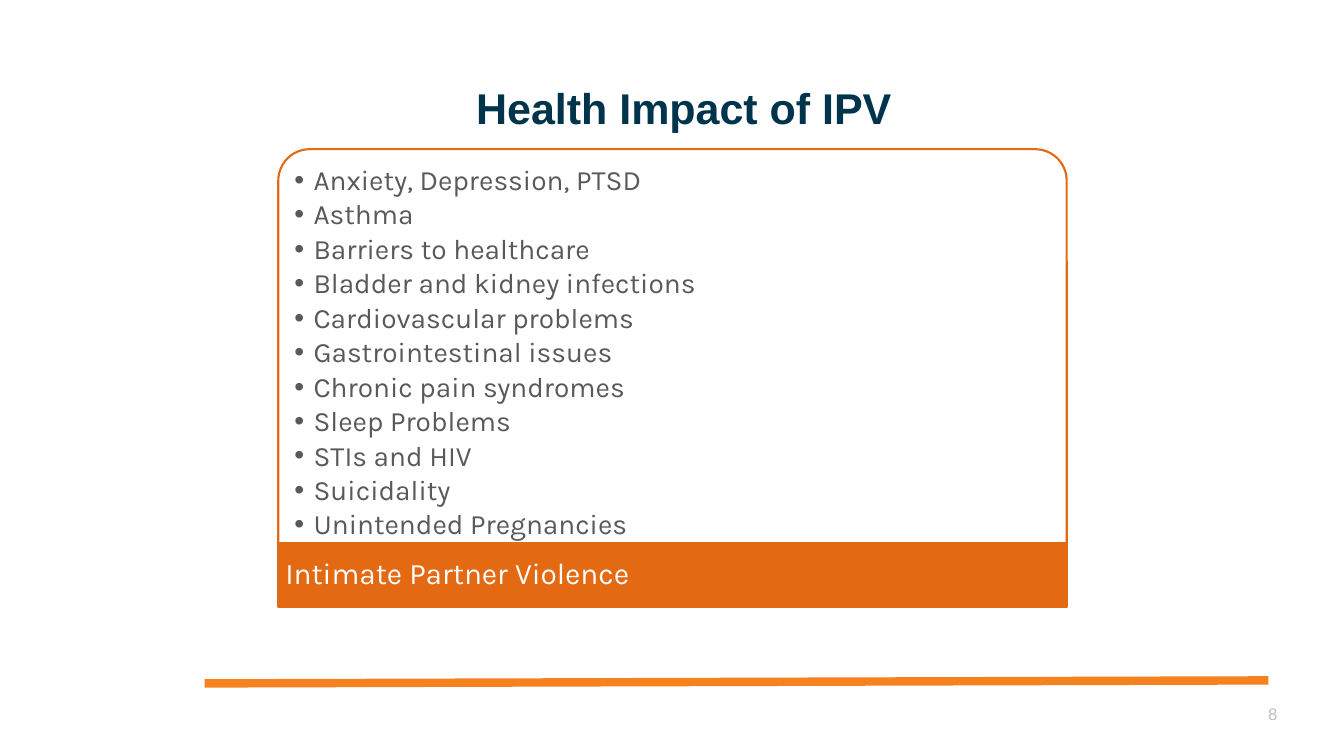
import pptx
import pptx.dml.color
import pptx.enum.shapes
import pptx.enum.text
import pptx.oxml.ns
import pptx.util
from lxml import etree
from pptx.util import Inches

TITLE = "Health Impact of IPV"
IMPACTS = [
    "Anxiety, Depression, PTSD",
    "Asthma",
    "Barriers to healthcare",
    "Bladder and kidney infections",
    "Cardiovascular problems",
    "Gastrointestinal issues",
    "Chronic pain syndromes",
    "Sleep Problems",
    "STIs and HIV",
    "Suicidality",
    "Unintended Pregnancies",
]
CAUSE = "Intimate Partner Violence"
PAGE_NUMBER = "8"

NAVY, ORANGE, RULE_ORANGE = "00334C", "E36912", "F5811F"
WHITE, TEXT_GREY, PALE_GREY = "FFFFFF", "58595B", "BFBFBF"
PANEL_LEFT, PANEL_TOP, PANEL_WIDTH, PANEL_HEIGHT = 2.76, 1.48, 7.82, 3.91
CAUSE_HEIGHT = 0.63

ALIGN = pptx.enum.text.PP_ALIGN
ANCHOR = pptx.enum.text.MSO_ANCHOR
SHAPE = pptx.enum.shapes.MSO_SHAPE


def rgb(value):
    return pptx.dml.color.RGBColor.from_string(value)


def add_element(parent, tag, **attributes):
    element = etree.SubElement(parent, pptx.oxml.ns.qn(tag))
    for name, value in attributes.items():
        element.set(name, value)
    return element


def set_frame(shape, insets=(0, 0, 0, 0), anchor=ANCHOR.TOP):
    """Set wrapping, anchor and the left, top, right and bottom insets."""
    frame = shape.text_frame
    frame.word_wrap = True
    frame.vertical_anchor = anchor
    (frame.margin_left, frame.margin_top,
     frame.margin_right, frame.margin_bottom) = map(Inches, insets)
    return frame


def style(para, font, size, color, align=ALIGN.LEFT, bold=False):
    para.alignment = align
    for span in para.runs:
        span.font.name = font
        span.font.size = pptx.util.Pt(size)
        span.font.bold = bold
        span.font.color.rgb = rgb(color)


def add_label(page, place, text, *look):
    box = page.shapes.add_textbox(*map(Inches, place))
    para = set_frame(box).paragraphs[0]
    para.text = text
    style(para, *look)


def add_block(page, kind, place, fill):
    block = page.shapes.add_shape(kind, *map(Inches, place))
    block.shadow.inherit = False
    block.fill.solid()
    block.fill.fore_color.rgb = rgb(fill)
    block.line.color.rgb = rgb(ORANGE)
    block.line.width = pptx.util.Pt(1.5)
    return block


def add_rule(page):
    rule = page.shapes.add_connector(
        pptx.enum.shapes.MSO_CONNECTOR.STRAIGHT,
        Inches(2.03), Inches(6.78), Inches(12.58), Inches(6.75))
    rule.line.color.rgb = rgb(RULE_ORANGE)
    rule.line.width = pptx.util.Pt(6)
    add_element(rule._element.spPr, "a:effectLst")


def add_impacts(page):
    panel = add_block(page, SHAPE.ROUND_2_SAME_RECTANGLE,
                      (PANEL_LEFT, PANEL_TOP, PANEL_WIDTH, PANEL_HEIGHT), WHITE)
    panel.adjustments[0] = 0.08
    panel.adjustments[1] = 0

    box = page.shapes.add_textbox(*map(Inches, (2.9, 1.58, 7.53, 3.74)))
    frame = set_frame(box, (0.02, 0.07, 0.02, 0.02))
    frame.text = "\n".join(IMPACTS)
    for index, para in enumerate(frame.paragraphs):
        properties = para._p.get_or_add_pPr()
        properties.set("marL", str(Inches(0.19)))
        properties.set("indent", str(-Inches(0.19)))
        bullet_color = add_element(properties, "a:buClr")
        add_element(bullet_color, "a:srgbClr", val=TEXT_GREY)
        add_element(properties, "a:buFont", typeface="Arial")
        add_element(properties, "a:buChar", char="•")
        para.line_spacing = 0.9
        if index:
            para.space_before = pptx.util.Pt(3)
        style(para, "Karla", 20, TEXT_GREY)


def add_cause(page):
    bar = add_block(page, SHAPE.RECTANGLE,
                    (PANEL_LEFT, PANEL_TOP + PANEL_HEIGHT, PANEL_WIDTH, CAUSE_HEIGHT),
                    ORANGE)
    para = set_frame(bar, (0.07, 0, 0.02, 0), ANCHOR.MIDDLE).paragraphs[0]
    para.text = CAUSE
    para.line_spacing = 0.9
    style(para, "Karla", 21.3, WHITE)


def main():
    deck = pptx.Presentation()
    deck.slide_width, deck.slide_height = Inches(13.33), Inches(7.5)
    page = deck.slides.add_slide(deck.slide_layouts[6])
    add_rule(page)
    add_label(page, (2.06, 0.81, 9.45, 0.52), TITLE,
              "Arial", 30.7, NAVY, ALIGN.CENTER, True)
    add_label(page, (9.6, 6.98, 3.07, 0.2), PAGE_NUMBER,
              "Arial", 12, PALE_GREY, ALIGN.RIGHT)
    add_impacts(page)
    add_cause(page)
    deck.save("out.pptx")


if __name__ == "__main__":
    main()
